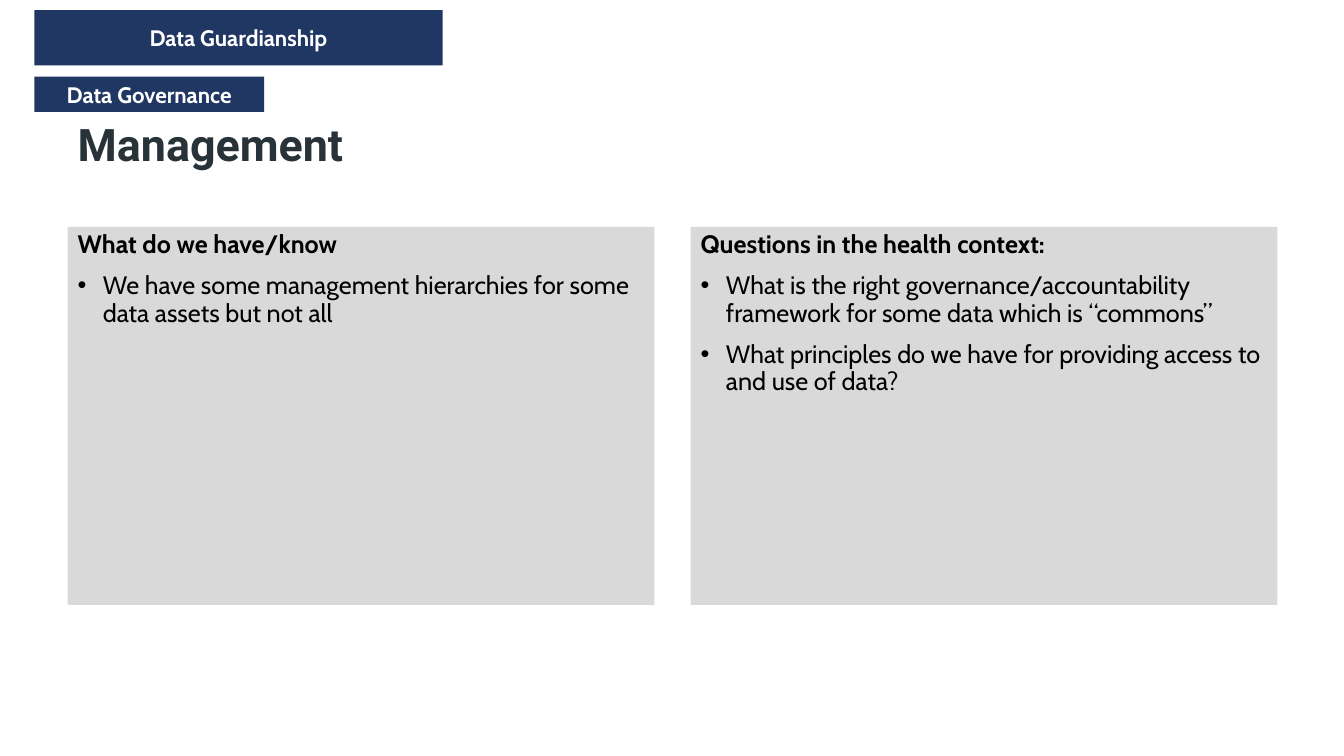
from lxml import etree
from pptx import Presentation
from pptx.dml.color import RGBColor
from pptx.enum.shapes import MSO_SHAPE
from pptx.enum.text import MSO_ANCHOR, MSO_AUTO_SIZE, PP_ALIGN
from pptx.oxml.ns import qn
from pptx.util import Inches, Pt

RECTANGLE = MSO_SHAPE.RECTANGLE
TOP, MIDDLE = MSO_ANCHOR.TOP, MSO_ANCHOR.MIDDLE
LEFT, CENTER = PP_ALIGN.LEFT, PP_ALIGN.CENTER
NO_FIT = MSO_AUTO_SIZE.NONE

COLORS = {"title": "283239", "text": "000000", "panel": "D9D9D9",
          "banner": "213763", "banner_text": "FFFFFF"}
TWO_CONTENT_LAYOUT = 3


class SlideBuilder:
    """Holds the slide and its fonts, with a method for each element."""

    title_font = "Roboto"
    body_font = "Cabin"

    def __init__(self, slide):
        self.slide = slide

    def place(self, shape, left, top, width, height):
        shape.left, shape.top = Inches(left), Inches(top)
        shape.width, shape.height = Inches(width), Inches(height)

    def fill(self, shape, color):
        shape.fill.solid()
        shape.fill.fore_color.rgb = RGBColor.from_string(COLORS[color])

    def frame(self, shape, anchor, wrap=True):
        text_frame = shape.text_frame
        text_frame.auto_size = NO_FIT
        text_frame.vertical_anchor = anchor
        text_frame.word_wrap = wrap
        return text_frame

    def add_run(self, paragraph, text, font, size, color, bold):
        run = paragraph.add_run()
        run.text = text
        run.font.name = font
        run.font.size = Pt(size)
        run.font.bold = bold
        run.font.color.rgb = RGBColor.from_string(COLORS[color])

    def set_bullet(self, paragraph, bullet):
        properties = paragraph._p.get_or_add_pPr()
        indent = Inches(0.25) if bullet else 0
        properties.set("marL", str(indent))
        properties.set("indent", str(-indent))
        if bullet:
            font = etree.SubElement(properties, qn("a:buFont"))
            font.set("typeface", "Arial")
            etree.SubElement(properties, qn("a:buChar")).set("char", "•")
        else:
            etree.SubElement(properties, qn("a:buNone"))

    def title(self, text, *box):
        shape = self.slide.shapes.title
        self.place(shape, *box)
        paragraph = self.frame(shape, MIDDLE).paragraphs[0]
        paragraph.alignment = LEFT
        paragraph.line_spacing = 0.9
        self.add_run(paragraph, text, self.title_font, 32, "title", True)

    def panel(self, placeholder, heading, bullets, *box):
        self.place(placeholder, *box)
        self.fill(placeholder, "panel")
        text_frame = self.frame(placeholder, TOP)
        for index, text in enumerate([heading, *bullets]):
            is_heading = index == 0
            paragraph = (text_frame.paragraphs[0] if is_heading
                         else text_frame.add_paragraph())
            self.set_bullet(paragraph, not is_heading)
            paragraph.alignment = LEFT
            paragraph.line_spacing = 0.9
            paragraph.space_before = Pt(0 if is_heading else 10)
            self.add_run(paragraph, text, self.body_font, 18, "text", is_heading)

    def banner(self, text, *box):
        shape = self.slide.shapes.add_shape(RECTANGLE, *map(Inches, box))
        shape.shadow.inherit = False
        self.fill(shape, "banner")
        shape.line.fill.background()
        paragraph = self.frame(shape, MIDDLE, wrap=False).paragraphs[0]
        paragraph.alignment = CENTER
        self.add_run(paragraph, text, self.body_font, 16, "banner_text", True)


def main():
    presentation = Presentation()
    presentation.slide_width = Inches(13.33)
    presentation.slide_height = Inches(7.5)
    layout = presentation.slide_layouts[TWO_CONTENT_LAYOUT]
    slide = presentation.slides.add_slide(layout)
    builder = SlideBuilder(slide)

    # Title
    builder.title("Management", 0.67, 0.83, 12, 1.25)

    # Two grey panels side by side
    panels = [
        ("What do we have/know",
         ["We have some management hierarchies for some data assets but not all"]),
        ("Questions in the health context:",
         ["What is the right governance/accountability framework for some data "
          "which is “commons”",
          "What principles do we have for providing access to and use of data?"]),
    ]
    for column, (heading, bullets) in enumerate(panels):
        builder.panel(slide.placeholders[column + 1], heading, bullets,
                      0.67 + column * 6.18, 2.25, 5.82, 3.75)

    # Topic banners at the top left
    builder.banner("Data Governance", 0.34, 0.76, 2.28, 0.35)
    builder.banner("Data Guardianship", 0.34, 0.1, 4.05, 0.55)

    presentation.save("out.pptx")


if __name__ == "__main__":
    main()
